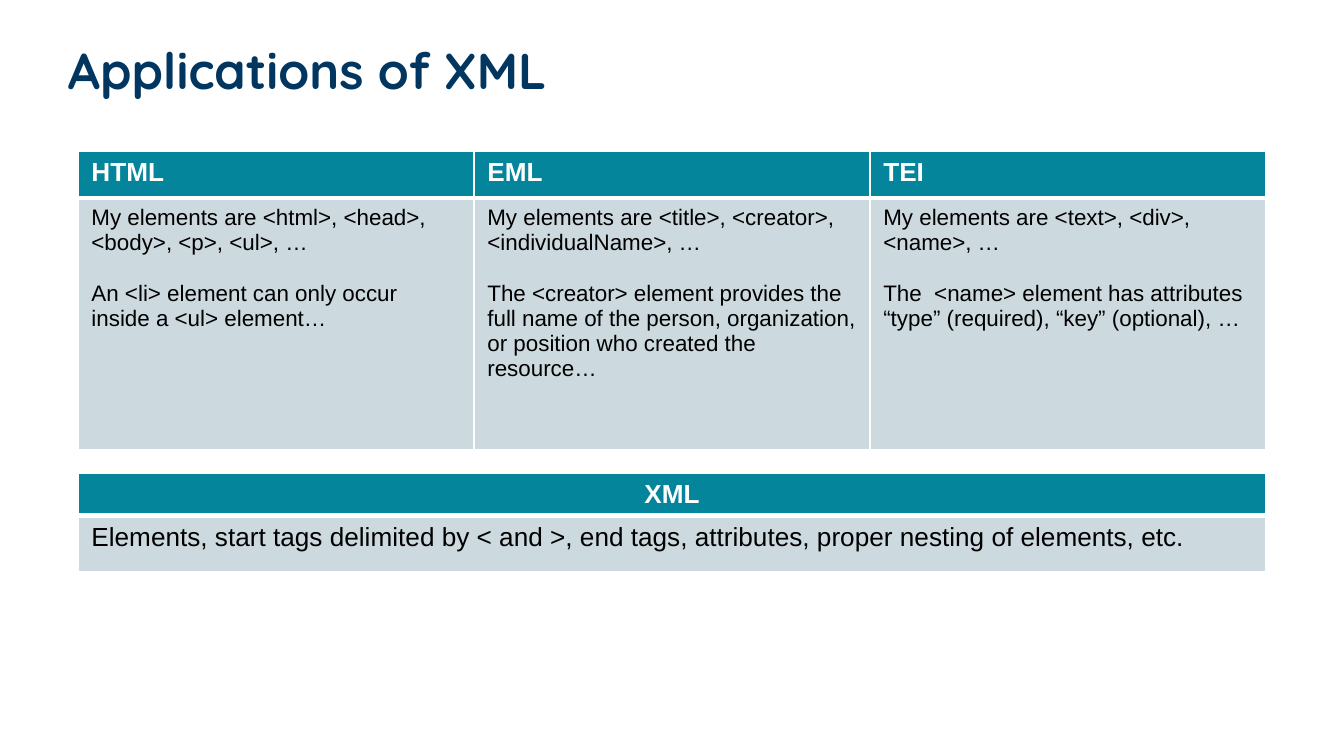
from lxml import etree
from pptx import Presentation
from pptx.dml.color import RGBColor
from pptx.enum.text import MSO_ANCHOR, PP_ALIGN
from pptx.oxml.ns import qn
from pptx.util import Pt

EMU_PER_PX = 914400 / 134.4
LEFT, CENTER = PP_ALIGN.LEFT, PP_ALIGN.CENTER
MIDDLE = MSO_ANCHOR.MIDDLE
COLORS = {
    "title": "003660",
    "header": "04859B",
    "body": "CCD9DE",
    "white": "FFFFFF",
    "black": "000000",
}
APPLICATIONS = {
    "HTML": [
        "My elements are <html>, <head>, <body>, <p>, <ul>, …",
        "An <li> element can only occur inside a <ul> element…",
    ],
    "EML": [
        "My elements are <title>, <creator>, <individualName>, …",
        "The <creator> element provides the full name of the person, organization, "
        "or position who created the resource…",
    ],
    "TEI": [
        "My elements are <text>, <div>, <name>, …",
        "The  <name> element has attributes “type” (required), “key” (optional), …",
    ],
}
FOUNDATION = {
    "XML": [
        "Elements, start tags delimited by < and >, end tags, attributes, "
        "proper nesting of elements, etc.",
    ],
}


def px(length):
    """Turn pixels into EMU."""
    return round(length * EMU_PER_PX)


def color(name):
    """Look up a named colour."""
    return RGBColor.from_string(COLORS[name])


def style_font(font, name, size, color_name, bold):
    """Set the look of a font."""
    font.name = name
    font.size = Pt(size)
    font.bold = bold
    font.color.rgb = color(color_name)


def add_borders(cell, bottom_width):
    """Draw white borders around a cell."""
    properties = cell._tc.get_or_add_tcPr()
    widths = {"a:lnL": 1, "a:lnR": 1, "a:lnT": 1, "a:lnB": bottom_width}
    for tag, width in widths.items():
        line = etree.SubElement(properties, qn(tag), w=str(Pt(width)))
        fill = etree.SubElement(line, qn("a:solidFill"))
        etree.SubElement(fill, qn("a:srgbClr"), val=COLORS["white"])


def fill_cell(cell, texts, size, is_header, alignment):
    """Write paragraphs into a header or body cell and colour it."""
    add_borders(cell, 3 if is_header else 1)
    cell.fill.solid()
    cell.fill.fore_color.rgb = color("header" if is_header else "body")
    cell.text_frame.text = "\n".join(texts)
    for index, paragraph in enumerate(cell.text_frame.paragraphs):
        paragraph.alignment = alignment
        if index:
            paragraph.space_before = Pt(14)
        text_color = "white" if is_header else "black"
        for run in paragraph.runs:
            style_font(run.font, "Arial", size, text_color, is_header)


def add_title(slide, box, text):
    """Place and format the slide title."""
    title = slide.shapes.title
    title.left, title.top, title.width, title.height = map(px, box)
    frame = title.text_frame
    frame.text = text
    frame.word_wrap = True
    frame.vertical_anchor = MIDDLE
    frame.margin_left = frame.margin_right = px(10)
    frame.margin_top = frame.margin_bottom = px(5)
    paragraph = frame.paragraphs[0]
    paragraph.alignment = LEFT
    paragraph.line_spacing = 0.9
    style_font(paragraph.runs[0].font, "Quicksand", 27, "title", True)


def add_standards_table(slide, box, header_height, columns, body_size, header_alignment):
    """Add a table with one header and one body cell for each standard."""
    left, top, width, height = box
    frame = slide.shapes.add_table(2, len(columns), *map(px, box))
    table = frame.table
    table.horz_banding = False
    table.rows[0].height = px(header_height)
    table.rows[1].height = px(height - header_height)
    for index, (heading, texts) in enumerate(columns.items()):
        table.columns[index].width = px(width / len(columns))
        fill_cell(table.cell(0, index), [heading], 14, True, header_alignment)
        fill_cell(table.cell(1, index), texts, body_size, False, LEFT)


def main():
    """Build and save the presentation."""
    presentation = Presentation()
    presentation.slide_width = px(1344)
    presentation.slide_height = px(756)
    slide = presentation.slides.add_slide(presentation.slide_layouts[5])
    add_title(slide, (58, 40, 1228, 66), "Applications of XML")
    add_standards_table(slide, (78, 151, 1188, 299), 47, APPLICATIONS, 12, LEFT)
    add_standards_table(slide, (78, 473, 1188, 99), 43, FOUNDATION, 14, CENTER)
    presentation.save("out.pptx")


if __name__ == "__main__":
    main()
